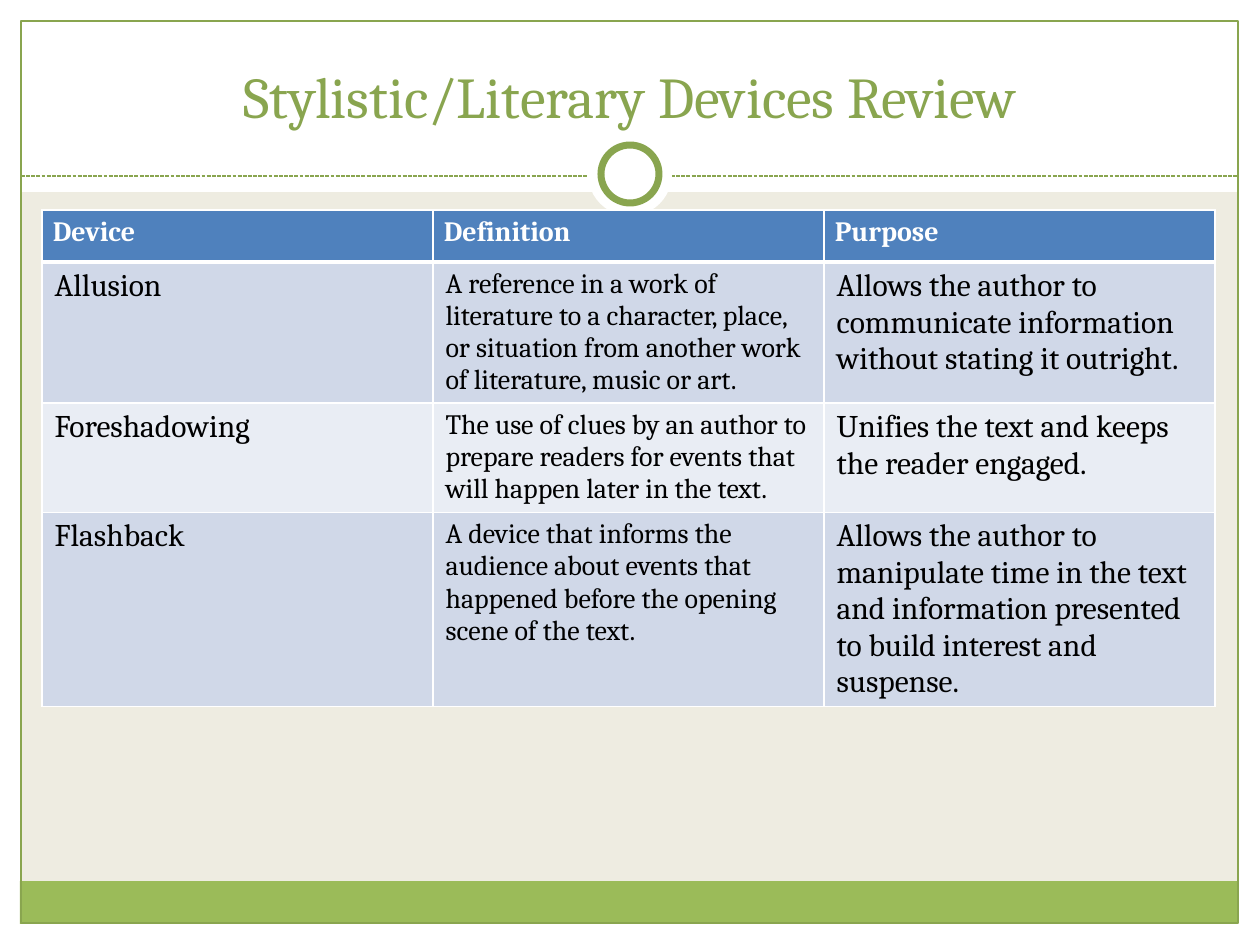
from lxml import etree
from pptx import Presentation
from pptx.dml.color import RGBColor
from pptx.enum.dml import MSO_LINE
from pptx.enum.shapes import MSO_CONNECTOR, MSO_SHAPE
from pptx.enum.text import MSO_ANCHOR, MSO_AUTO_SIZE, PP_ALIGN
from pptx.oxml.ns import qn
from pptx.util import Emu, Pt

RECT, OVAL = MSO_SHAPE.RECTANGLE, MSO_SHAPE.OVAL
STRAIGHT = MSO_CONNECTOR.STRAIGHT
DASH = MSO_LINE.SQUARE_DOT
CENTER = PP_ALIGN.CENTER
BOTTOM = MSO_ANCHOR.BOTTOM
NO_AUTOFIT = MSO_AUTO_SIZE.NONE

SCALE = 914400 / 126
WIDTH, HEIGHT = 1260, 945
FONT = "Cambria"

WHITE = RGBColor(0xFF, 0xFF, 0xFF)
BLACK = RGBColor(0, 0, 0)
CREAM = RGBColor(0xEE, 0xEC, 0xE1)
GREEN = RGBColor(0x9B, 0xBB, 0x59)
DARK_GREEN = RGBColor(0x89, 0xA5, 0x4F)
BLUE = RGBColor(0x4F, 0x81, 0xBD)
BANDS = (RGBColor(0xD0, 0xD8, 0xE8), RGBColor(0xE9, 0xED, 0xF4))

HEADERS = ("Device", "Definition", "Purpose")
DEVICES = (
    ("Allusion",
     "A reference in a work of literature to a character, place, or situation "
     "from another work of literature, music or art.",
     "Allows the author to communicate information without stating it outright."),
    ("Foreshadowing",
     "The use of clues by an author to prepare readers for events that will "
     "happen later in the text.",
     "Unifies the text and keeps the reader engaged."),
    ("Flashback",
     "A device that informs the audience about events that happened before "
     "the opening scene of the text.",
     "Allows the author to manipulate time in the text and information "
     "presented to build interest and suspense."),
)
BODY_SIZES = (18, 16, 18)
COL_WIDTH, ROW_HEIGHT = 391, 52


def px(n):
    return Emu(round(n * SCALE))


def add_shape(slide, kind, box, fill=None, line=None, weight=0.75):
    sp = slide.shapes.add_shape(kind, *map(px, box))
    sp.shadow.inherit = False
    if fill is None:
        sp.fill.background()
    else:
        sp.fill.solid()
        sp.fill.fore_color.rgb = fill
    if line is None:
        sp.line.fill.background()
    else:
        sp.line.color.rgb = line
        sp.line.width = Pt(weight)


def add_divider(slide, left, right, y):
    cxn = slide.shapes.add_connector(STRAIGHT, px(left), px(y), px(right), px(y))
    cxn.line.color.rgb = DARK_GREEN
    cxn.line.width = Pt(0.75)
    cxn.line.dash_style = DASH
    etree.SubElement(cxn._element.spPr, qn("a:effectLst"))


def add_frame(slide):
    """White margins, green footer, outline and the ring on the divider."""
    for box in ((0, 924, WIDTH, 21), (0, 0, WIDTH, 192),
                (0, 0, 21, HEIGHT), (1239, 0, 21, HEIGHT)):
        add_shape(slide, RECT, box, WHITE)
    add_shape(slide, RECT, (20, 881, 1218, 43), GREEN)
    add_shape(slide, RECT, (21, 21, 1217, 902), line=DARK_GREEN)
    add_divider(slide, 21, 1238, 176)
    add_shape(slide, OVAL, (588, 132, 84, 84), WHITE)
    add_shape(slide, OVAL, (601, 145, 58, 58), WHITE, DARK_GREEN, 4)


def format_text(p, size, color, bold=False):
    for r in p.runs:
        r.font.name = FONT
        r.font.size = Pt(size)
        r.font.bold = bold
        r.font.color.rgb = color


def set_title(slide, text):
    title = slide.shapes.title
    title.left, title.top, title.width, title.height = map(px, (42, 32, 1176, 104))
    slide.shapes._spTree.append(title._element)  # in front of the white header
    tf = title.text_frame
    tf.text = text
    tf.auto_size = NO_AUTOFIT
    tf.vertical_anchor = BOTTOM
    p = tf.paragraphs[0]
    p.alignment = CENTER
    format_text(p, 33, DARK_GREEN)


def set_borders(cell, bottom):
    """White cell borders; call before the fill, which must follow them."""
    tc_pr = cell._tc.get_or_add_tcPr()
    for side, weight in (("L", 1), ("R", 1), ("T", 1), ("B", bottom)):
        ln = etree.SubElement(tc_pr, qn(f"a:ln{side}"), w=str(Pt(weight)))
        fill = etree.SubElement(ln, qn("a:solidFill"))
        etree.SubElement(fill, qn("a:srgbClr"), val=str(WHITE))


def fill_cell(cell, text, fill, size, color, header=False):
    set_borders(cell, 3 if header else 1)
    cell.fill.solid()
    cell.fill.fore_color.rgb = fill
    if header:
        cell.margin_left = cell.margin_right = px(11)
    cell.text_frame.text = text
    format_text(cell.text_frame.paragraphs[0], size, color, header)


def add_device_table(slide):
    rows, cols = len(DEVICES) + 1, len(HEADERS)
    table = slide.shapes.add_table(
        rows, cols, px(42), px(210),
        px(cols * COL_WIDTH), px(rows * ROW_HEIGHT)).table
    for col, text in enumerate(HEADERS):
        fill_cell(table.cell(0, col), text, BLUE, 16, WHITE, header=True)
    for row, device in enumerate(DEVICES, 1):
        for col, (text, size) in enumerate(zip(device, BODY_SIZES)):
            fill_cell(table.cell(row, col), text, BANDS[(row - 1) % 2], size, BLACK)


def main():
    prs = Presentation()
    prs.slide_width, prs.slide_height = px(WIDTH), px(HEIGHT)
    slide = prs.slides.add_slide(prs.slide_layouts[5])
    slide.background.fill.solid()
    slide.background.fill.fore_color.rgb = CREAM
    add_frame(slide)
    set_title(slide, "Stylistic/Literary Devices Review")
    add_device_table(slide)
    prs.save("out.pptx")


if __name__ == "__main__":
    main()
